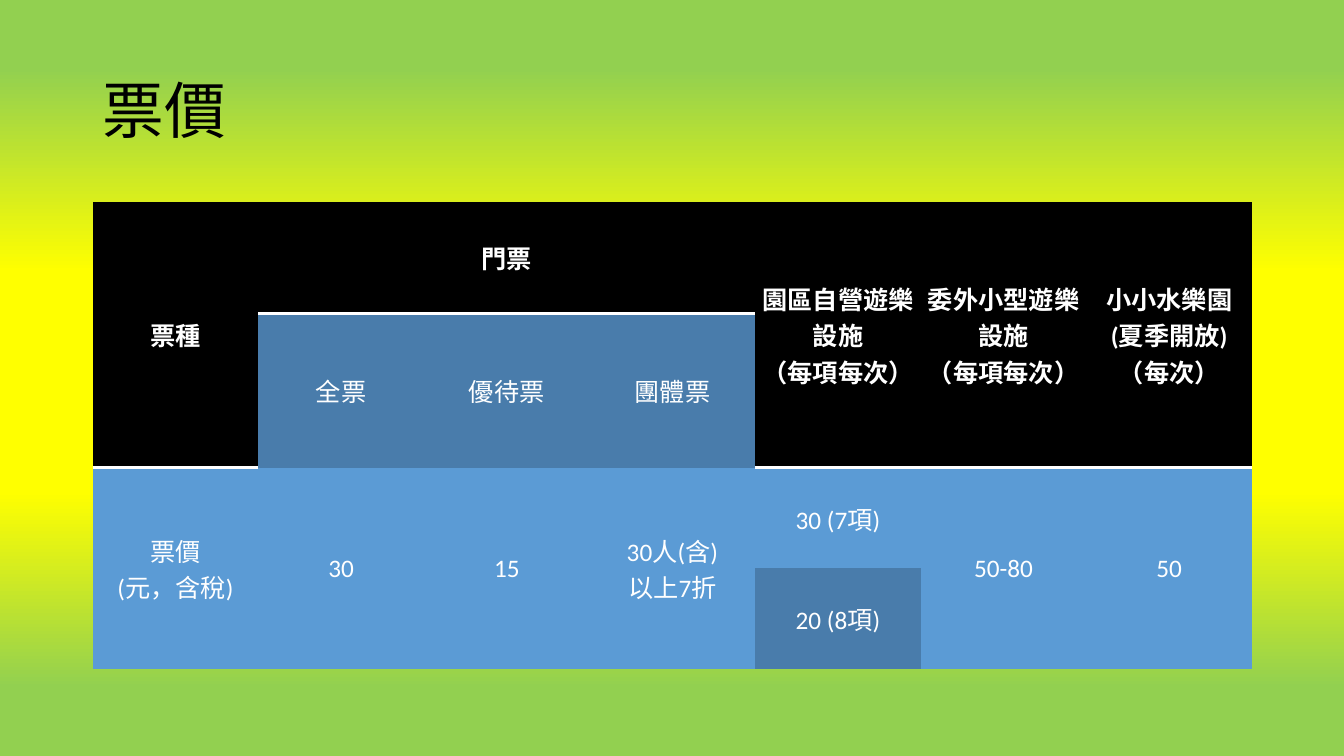
from lxml import etree
from pptx import Presentation, util as u
from pptx.dml.color import RGBColor
from pptx.enum import text
from pptx.oxml.ns import qn

COLORS = {
    "green": "92D050", "yellow": "FFFF00", "header": "000000",
    "dark": "497CAB", "light": "5B9BD5", "white": "FFFFFF", "title": "000000",
}
LATIN, CJK = "Calibri", "Noto Sans CJK JP"
NO_STYLE = "{2D5ABB26-0587-4C30-8999-92F81FD0307C}"


def add_run(paragraph, words, size, latin, color, bold=False):
    run = paragraph.add_run()
    run.text = words
    run.font.size = u.Pt(size)
    run.font.bold = bold
    run.font.name = latin
    run.font.color.rgb = RGBColor.from_string(COLORS[color])
    etree.SubElement(run.font._element, qn("a:ea"), typeface=CJK)


def add_bottom_border(cell):
    properties = cell._tc.get_or_add_tcPr()
    line = etree.Element(qn("a:lnB"), w=str(u.Pt(2)))
    fill = etree.SubElement(line, qn("a:solidFill"))
    etree.SubElement(fill, qn("a:srgbClr"), val=COLORS["white"])
    properties.insert(0, line)


prs = Presentation()
prs.slide_width, prs.slide_height = u.Inches(13.33), u.Inches(7.5)
slide = prs.slides.add_slide(prs.slide_layouts[5])

# Background: green edges around a yellow band
background = slide.background.fill
background.gradient()
background.gradient_angle = 90
stops = slide.element.find(".//" + qn("a:gsLst"))
for stop in list(stops):
    stops.remove(stop)
for percent, color in [(9, "green"), (35, "yellow"), (64, "yellow"), (91, "green")]:
    stop = etree.SubElement(stops, qn("a:gs"), pos=str(percent * 1000))
    etree.SubElement(stop, qn("a:srgbClr"), val=COLORS[color])

# Title
left, width = u.Inches(0.92), u.Inches(11.5)
title = slide.shapes.title
title.left, title.top, title.width, title.height = left, u.Inches(0.4), width, u.Inches(1.45)
title.text_frame.vertical_anchor = text.MSO_ANCHOR.MIDDLE
heading = title.text_frame.paragraphs[0]
heading.alignment = text.PP_ALIGN.LEFT
heading.line_spacing = 0.9
add_run(heading, "票價", 44, CJK, "title")

# Price table
row_heights = [1.11, 1.53, 1, 1]
column_count = 7
prices = slide.shapes.add_table(
    len(row_heights), column_count, left, u.Inches(2), width, u.Inches(sum(row_heights))
).table
prices.first_row = prices.horz_banding = False
prices._tbl.tblPr.find(qn("a:tableStyleId")).text = NO_STYLE
for row, height in zip(prices.rows, row_heights):
    row.height = u.Inches(height)
for column in prices.columns:
    column.width = width // column_count

# (row, column, row span, column span, fill, lines)
entries = [
    (0, 0, 2, 1, "header", ["票種"]),
    (0, 1, 1, 3, "header", ["門票"]),
    (0, 4, 2, 1, "header", ["園區自營遊樂設施", "（每項每次）"]),
    (0, 5, 2, 1, "header", ["委外小型遊樂設施", "（每項每次）"]),
    (0, 6, 2, 1, "header", ["小小水樂園", "(夏季開放)", "（每次）"]),
    (1, 1, 1, 1, "dark", ["全票"]),
    (1, 2, 1, 1, "dark", ["優待票"]),
    (1, 3, 1, 1, "dark", ["團體票"]),
    (2, 0, 2, 1, "light", ["票價", "(元，含稅)"]),
    (2, 1, 2, 1, "light", ["30"]),
    (2, 2, 2, 1, "light", ["15"]),
    (2, 3, 2, 1, "light", ["30人(含)", "以上7折"]),
    (2, 4, 1, 1, "light", ["30 (7項)"]),
    (2, 5, 2, 1, "light", ["50-80"]),
    (2, 6, 2, 1, "light", ["50"]),
    (3, 4, 1, 1, "dark", ["20 (8項)"]),
]
for row, column, row_span, column_span, fill, lines in entries:
    cell = prices.cell(row, column)
    if row_span * column_span > 1:
        cell.merge(prices.cell(row + row_span - 1, column + column_span - 1))
    cell.fill.solid()
    cell.fill.fore_color.rgb = RGBColor.from_string(COLORS[fill])
    cell.vertical_anchor = text.MSO_ANCHOR.MIDDLE
    cell.margin_left = cell.margin_right = u.Inches(0.03)
    cell.margin_top = cell.margin_bottom = u.Inches(0.03)
    paragraph = cell.text_frame.paragraphs[0]
    paragraph.alignment = text.PP_ALIGN.CENTER
    for index, words in enumerate(lines):
        if index:
            paragraph.add_line_break()
        add_run(paragraph, words, 18, LATIN, "white", bold=fill == "header")
    if fill == "header":
        for r in range(row, row + row_span):
            for c in range(column, column + column_span):
                add_bottom_border(prices.cell(r, c))

prs.save("out.pptx")
